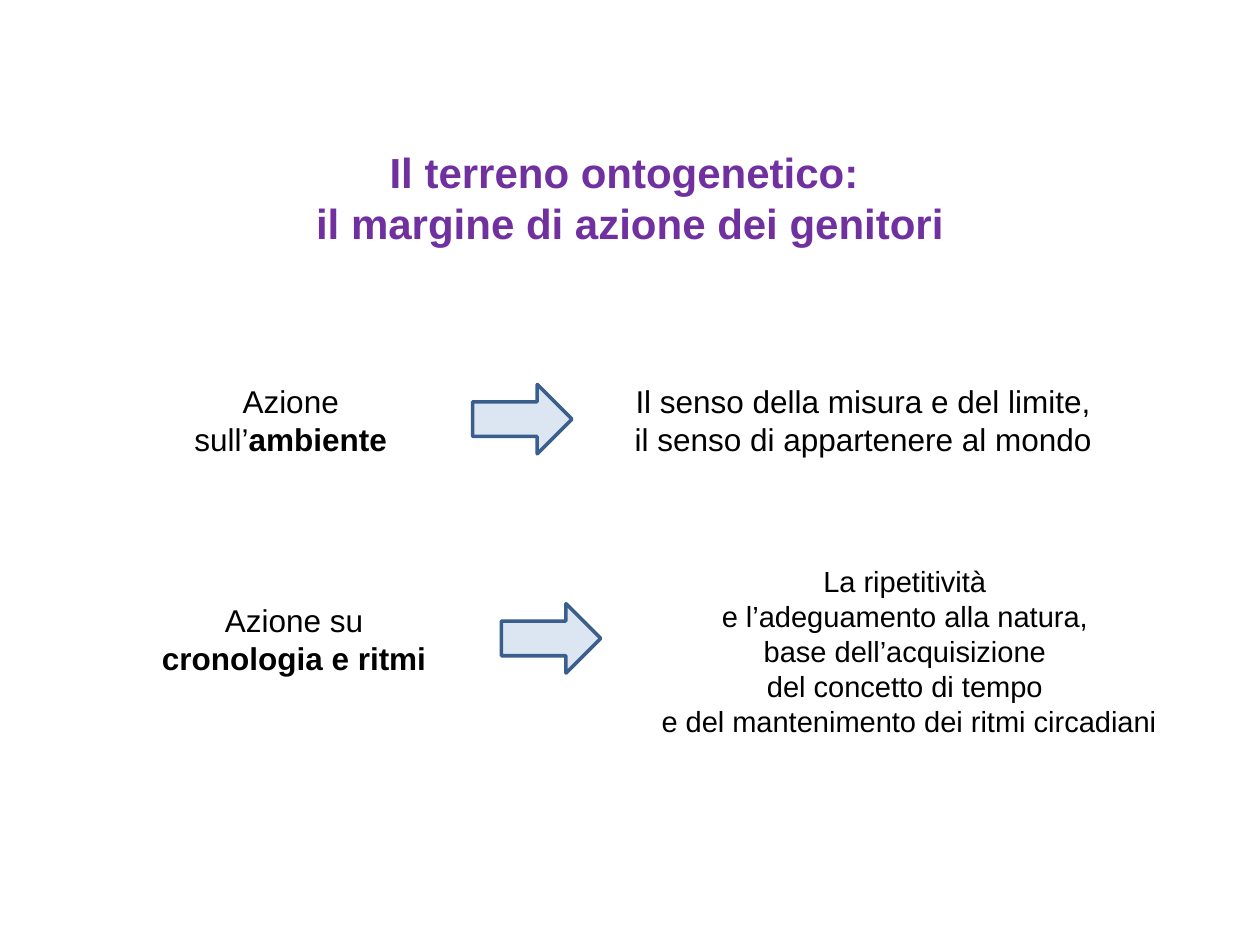
"""Build a slide on how parents can act on the ontogenetic ground."""
from pptx import Presentation
from pptx.dml.color import RGBColor
from pptx.enum.shapes import MSO_SHAPE
from pptx.enum.text import MSO_ANCHOR, PP_ALIGN
from pptx.util import Cm, Pt

PURPLE = RGBColor(0x70, 0x30, 0xA0)
BLACK = RGBColor(0x00, 0x00, 0x00)
PALE_BLUE = RGBColor(0xDC, 0xE6, 0xF2)
STEEL_BLUE = RGBColor(0x3A, 0x5F, 0x8C)


def add_text(slide, box, lines, size, color=BLACK, bold=False, bold_ending=""):
    shape = slide.shapes.add_textbox(*[Cm(length) for length in box])
    text_frame = shape.text_frame
    text_frame.word_wrap = True
    text_frame.vertical_anchor = MSO_ANCHOR.MIDDLE
    text_frame.text = lines
    if bold_ending:
        text_frame.paragraphs[-1].add_run().text = bold_ending
    for paragraph in text_frame.paragraphs:
        paragraph.alignment = PP_ALIGN.CENTER
        for run in paragraph.runs:
            run.font.name = "Arial"
            run.font.size = Pt(size)
            run.font.color.rgb = color
            run.font.bold = bold or run.text == bold_ending


presentation = Presentation()
presentation.slide_width = Cm(25.4)
presentation.slide_height = Cm(19.05)
slide = presentation.slides.add_slide(presentation.slide_layouts[6])

title = "Il terreno ontogenetico: \vil margine di azione dei genitori"
add_text(slide, (1.9, 1.93, 21.6, 4.09), title, 24, PURPLE, bold=True)

actions = [
    (2.67, 7.42, "Azione sull’", "ambiente"),
    (2.74, 11.84, "Azione su ", "cronologia e ritmi"),
]
for left, top, opening, emphasis in actions:
    add_text(slide, (left, top, 6.38, 2.08), opening, 18, bold_ending=emphasis)

limits = "Il senso della misura e del limite, il senso di appartenere al mondo"
add_text(slide, (12.4, 6.71, 10, 3.5), limits, 18)

rhythms = "\n".join([
    "La ripetitività ",
    "e l’adeguamento alla natura, ",
    "base dell’acquisizione ",
    "del concetto di tempo ",
    "e del mantenimento dei ritmi circadiani",
])
add_text(slide, (12.73, 11.13, 11.18, 3.99), rhythms, 16.6)

for left, top in [(9.53, 7.75), (10.11, 12.17)]:
    arrow = slide.shapes.add_shape(
        MSO_SHAPE.RIGHT_ARROW, Cm(left), Cm(top), Cm(2), Cm(1.4)
    )
    arrow.shadow.inherit = False
    arrow.fill.solid()
    arrow.fill.fore_color.rgb = PALE_BLUE
    arrow.line.color.rgb = STEEL_BLUE
    arrow.line.width = Pt(2)

presentation.save("out.pptx")
